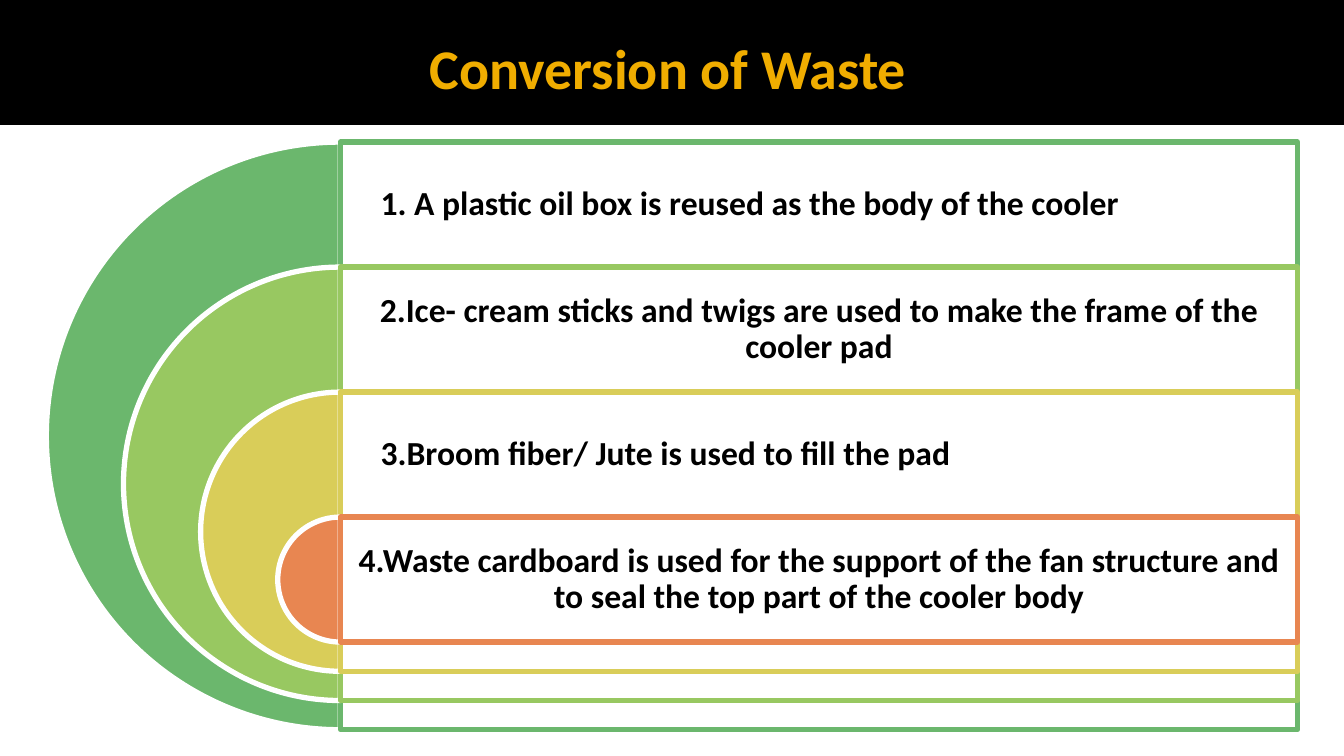
from lxml.etree import SubElement
from pptx import Presentation
from pptx.dml.color import RGBColor
from pptx.enum.shapes import MSO_SHAPE
from pptx.enum.text import MSO_ANCHOR, PP_ALIGN
from pptx.oxml.ns import qn
from pptx.util import Inches, Pt

COLORS = {
    "header": "000000",
    "title": "F0AD00",
    "text": "000000",
    "white": "FFFFFF",
    "green": "6BB76D",
    "lime": "98C861",
    "yellow": "D9CD59",
    "orange": "E88651",
}
SLIDE_WIDTH, SLIDE_HEIGHT = 13.33, 7.5
ROW_HEIGHT = 1.24
OUTLINE_WIDTH = 3.78
PANEL_OPACITY = 90
STEPS = [
    ("green", PP_ALIGN.LEFT, 0.3, "1. A plastic oil box is reused as the body of the cooler"),
    ("lime", PP_ALIGN.CENTER, 0, "2.Ice- cream sticks and twigs are used to make the frame of the cooler pad"),
    ("yellow", PP_ALIGN.LEFT, 0.3, "3.Broom fiber/ Jute is used to fill the pad"),
    ("orange", PP_ALIGN.CENTER, 0, "4.Waste cardboard is used for the support of the fan structure and to seal the top part of the cooler body"),
]


def color(name):
    return RGBColor.from_string(COLORS[name])


def apply(target, values):
    for name, value in values.items():
        setattr(target, name, value)


def add_filled(shapes, kind, box, fill, line=None):
    shape = shapes.add_shape(kind, *map(Inches, box))
    shape.shadow.inherit = False
    shape.fill.solid()
    shape.fill.fore_color.rgb = color(fill)
    if line:
        shape.line.color.rgb = color(line)
        shape.line.width = Pt(OUTLINE_WIDTH)
    else:
        shape.line.fill.background()
    return shape


def set_opacity(shape, percent):
    solid = shape.fill._xPr.find(qn("a:solidFill"))
    SubElement(solid[0], qn("a:alpha"), val=str(percent * 1000))


def write_text(shape, text, insets, font, paragraph_format):
    frame = shape.text_frame
    frame.text = text
    sides = ("margin_left", "margin_top", "margin_right", "margin_bottom")
    apply(frame, dict(zip(sides, map(Inches, insets))))
    apply(frame, {"word_wrap": True, "vertical_anchor": MSO_ANCHOR.MIDDLE})
    paragraph = frame.paragraphs[0]
    apply(paragraph, paragraph_format)
    run_font = paragraph.runs[0].font
    apply(run_font, {"name": "Calibri", "bold": True, "size": Pt(font["size"])})
    run_font.color.rgb = color(font["color"])


def add_header(slide, box):
    left, top, width, height = box
    band = add_filled(slide.shapes, MSO_SHAPE.RECTANGLE, box, "header")
    title = slide.shapes.title
    title._element.addprevious(band._element)
    margin = 0.05 * width
    apply(title, {
        "left": Inches(left + margin),
        "top": Inches(top + 0.17),
        "width": Inches(width - 2 * margin),
        "height": Inches(0.8 * height),
    })
    write_text(title, "Conversion of Waste", (0.1, 0.05, 0.18, 0.05),
               {"size": 40, "color": "title"}, {"alignment": PP_ALIGN.CENTER})


def add_nested_steps(slide, box):
    left, top, width, height = box
    shapes = slide.shapes.add_group_shape().shapes
    center = left + height / 2
    panel_width = width - height / 2
    shrink = (height - ROW_HEIGHT) / (len(STEPS) - 1)
    for index, (accent, alignment, indent, text) in enumerate(STEPS):
        size = height - index * shrink
        row_top = top + index * ROW_HEIGHT
        half_disc = add_filled(shapes, MSO_SHAPE.PIE,
                               (center - size / 2, row_top, size, size), accent, "white")
        half_disc.adjustments[0] = 54
        half_disc.adjustments[1] = 162
        panel = add_filled(shapes, MSO_SHAPE.RECTANGLE,
                           (center, row_top, panel_width, size), "white", accent)
        set_opacity(panel, PANEL_OPACITY)
        label = shapes.add_textbox(*map(Inches, (center, row_top, panel_width, ROW_HEIGHT)))
        write_text(label, text, (0.1 + indent, 0.1, 0.1, 0.1),
                   {"size": 24, "color": "text"},
                   {"alignment": alignment, "line_spacing": 0.9})


def main():
    presentation = Presentation()
    apply(presentation, {"slide_width": Inches(SLIDE_WIDTH), "slide_height": Inches(SLIDE_HEIGHT)})
    slide = presentation.slides.add_slide(presentation.slide_layouts.get_by_name("Title Only"))
    add_header(slide, (0, 0, SLIDE_WIDTH, ROW_HEIGHT))
    add_nested_steps(slide, (0.46, 1.41, 12.41, 5.83))
    presentation.save("out.pptx")


if __name__ == "__main__":
    main()
